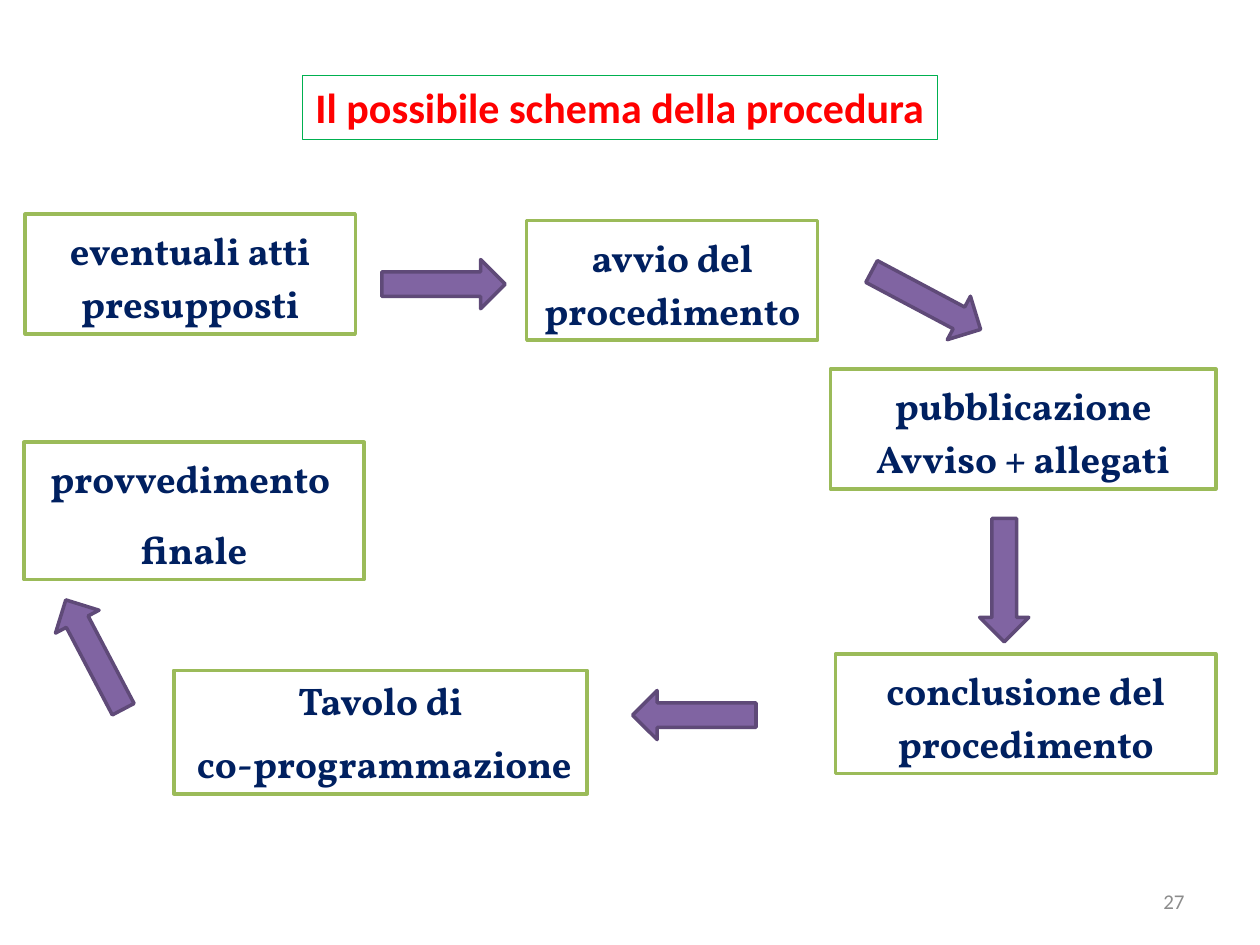
from pptx import Presentation
from pptx import util as u
from pptx.dml import color
from pptx.enum import shapes, text

colours = {"title": "FF0000", "title_line": "00B050", "box": "FFFFFF", "box_line": "9BBB59",
           "step": "002060", "arrow": "8064A2", "arrow_line": "5F4A78", "number": "8C8C8C"}

presentation = Presentation()
presentation.slide_width, presentation.slide_height = u.Inches(10), u.Inches(7.5)
column = presentation.slide_width / 100
row = presentation.slide_height / 75
slide = presentation.slides.add_slide(presentation.slide_layouts[6])


def add_block(kind, left, top, width, height, fill=None, line=None, weight=2):
    shape = slide.shapes.add_shape(kind, int(left * column), int(top * row),
                                   int(width * column), int(height * row))
    shape.shadow.inherit = False
    if fill:
        shape.fill.solid()
        shape.fill.fore_color.rgb = color.RGBColor.from_string(colours[fill])
    else:
        shape.fill.background()
    if line:
        shape.line.color.rgb = color.RGBColor.from_string(colours[line])
        shape.line.width = u.Pt(weight)
    else:
        shape.line.fill.background()
    return shape


def write(shape, lines, font, size, colour, bold=True, align=text.PP_ALIGN.CENTER,
          spacing=None, after=None, anchor=text.MSO_ANCHOR.TOP):
    frame = shape.text_frame
    frame.word_wrap = True
    frame.vertical_anchor = anchor
    for index, line in enumerate(lines):
        paragraph = frame.add_paragraph() if index else frame.paragraphs[0]
        paragraph.alignment = align
        paragraph.line_spacing = spacing
        paragraph.space_after = after
        run = paragraph.add_run()
        run.text = line
        run.font.name, run.font.size, run.font.bold = font, u.Pt(size), bold
        run.font.color.rgb = color.RGBColor.from_string(colours[colour])


rectangle = shapes.MSO_SHAPE.RECTANGLE
title = add_block(rectangle, 24, 6, 50.4, 5.05, line="title_line", weight=0.75)
write(title, ["Il possibile schema della procedura"], "Calibri", 24, "title")
title.text_frame.word_wrap = False

steps = [
    (2, 17, 26.2, 9.5, 1.15, ["eventuali atti presupposti"]),
    (41.8, 17.5, 23.1, 9.5, 1.15, ["avvio del procedimento"]),
    (65.9, 29.3, 30.6, 9.5, 1.15, ["pubblicazione Avviso + allegati"]),
    (66.3, 51.9, 30.2, 9.5, 1.15, ["conclusione del procedimento"]),
    (13.8, 53.2, 32.8, 9.8, None, ["Tavolo di", " co-programmazione"]),
    (1.9, 35.1, 27, 10.9, 1.15, ["provvedimento ", "finale"]),
]
for left, top, width, height, spacing, lines in steps:
    box = add_block(rectangle, left, top, width, height, "box", "box_line")
    write(box, lines, "Vollkorn", 22, "step", spacing=spacing, after=u.Pt(10))

arrows = [(30.3, 20.6, 0), (68.6, 21.9, 28), (74.8, 44.1, 90), (50.2, 54.8, 180), (2.6, 50, 242.3)]
for left, top, angle in arrows:
    arrow = add_block(shapes.MSO_SHAPE.RIGHT_ARROW, left, top, 9.8, 3.9, "arrow", "arrow_line")
    arrow.rotation = angle

number = slide.shapes.add_textbox(int(71.7 * column), int(69.5 * row), int(23.3 * column), int(4 * row))
write(number, ["27"], "Calibri", 12, "number", bold=False,
      align=text.PP_ALIGN.RIGHT, anchor=text.MSO_ANCHOR.MIDDLE)

presentation.save("out.pptx")
